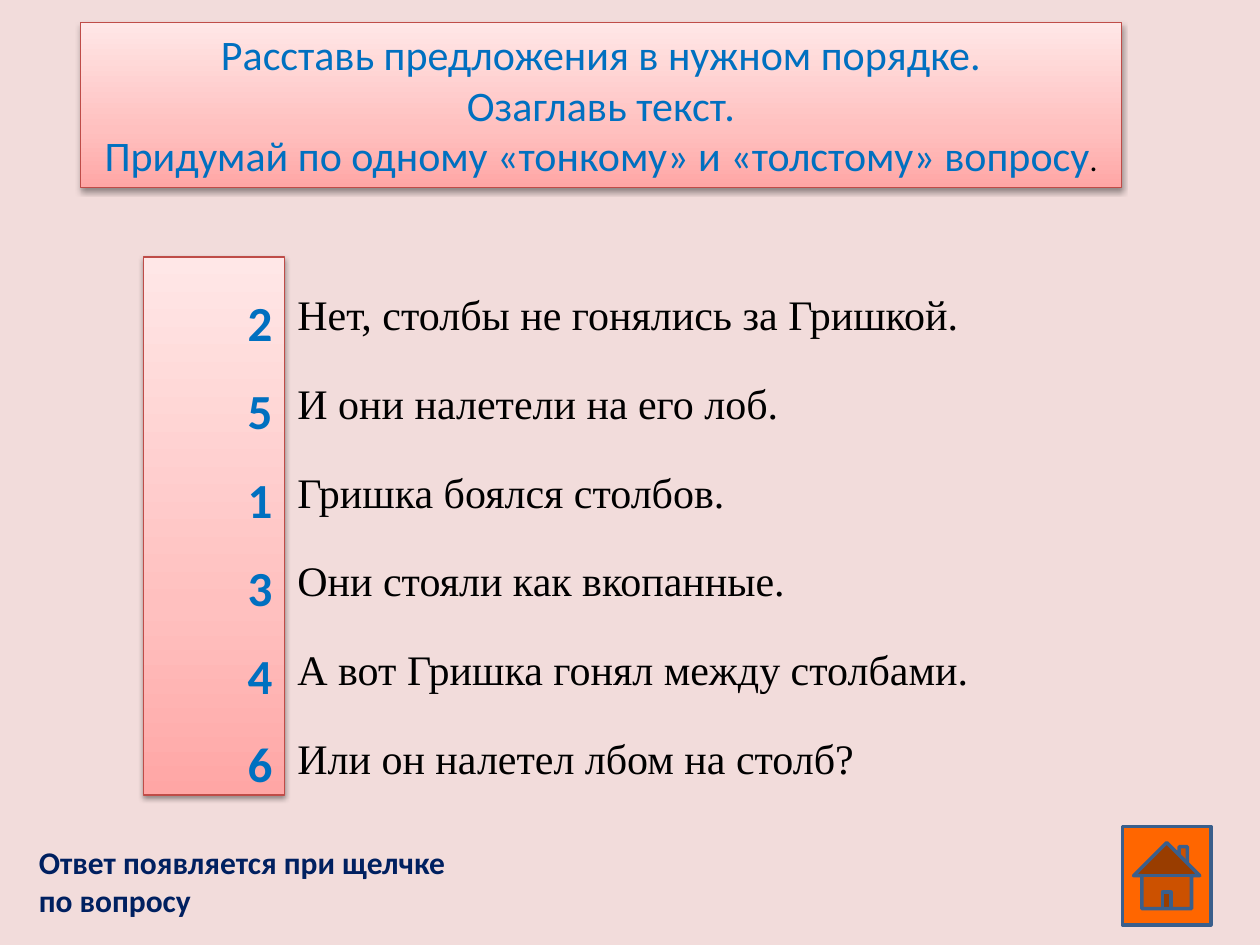
from lxml import etree
from pptx import Presentation
from pptx import util as u
from pptx.dml.color import RGBColor
from pptx.enum import shapes, text
from pptx.oxml.ns import qn

TASK_LINES = [
    "Расставь предложения в нужном порядке.",
    "Озаглавь текст.",
    "Придумай по одному «тонкому» и «толстому» вопросу",
]
SENTENCES = [
    ("2", "Нет, столбы не гонялись за Гришкой."),
    ("5", "И они налетели на его лоб."),
    ("1", "Гришка боялся столбов."),
    ("3", "Они стояли как вкопанные."),
    ("4", "А вот Гришка гонял между столбами."),
    ("6", "Или он налетел лбом на столб?"),
]
PANEL_STOPS = [(0, "FFA6A5"), (35, "FFC0BF"), (100, "FFE7E7")]


def color(hex_value):
    return RGBColor.from_string(hex_value)


def inches(*lengths):
    return [u.Inches(length) for length in lengths]


def place(shape, *box):
    shape.left, shape.top, shape.width, shape.height = inches(*box)


def set_line(shape, hex_value, width):
    shape.line.color.rgb = color(hex_value)
    shape.line.width = u.Pt(width)


def add_color(parent, hex_value):
    return etree.SubElement(parent, qn("a:srgbClr"), val=hex_value)


def style_panel(shape):
    """Give the shape the pink gradient, red outline and soft shadow."""
    properties = shape._element.spPr
    shape.fill.gradient()
    shape.fill.gradient_angle = 90
    stops = properties.find(".//" + qn("a:gsLst"))
    for stop in list(stops):
        stops.remove(stop)
    for position, hex_value in PANEL_STOPS:
        stop = etree.SubElement(stops, qn("a:gs"), pos=str(position * 1000))
        add_color(stop, hex_value)
    set_line(shape, "BF4C48", 0.75)

    shape.shadow.inherit = False
    shadow = etree.SubElement(
        properties.find(qn("a:effectLst")), qn("a:outerShdw"),
        blurRad=str(u.Pt(3.1)), dist=str(u.Pt(1.6)), dir="5400000", rotWithShape="0")
    etree.SubElement(add_color(shadow, "000000"), qn("a:alpha"), val="38000")


def format_font(run, font, size, hex_value, bold=False):
    run.font.name = font
    run.font.size = u.Pt(size)
    run.font.color.rgb = color(hex_value)
    run.font.bold = bold


def write(shape, lines, font, size, hex_value, bold=False,
          align=text.PP_ALIGN.LEFT, spacing=1.0, after=0):
    frame = shape.text_frame
    frame.text = "\n".join(lines)
    frame.word_wrap = True
    frame.auto_size = text.MSO_AUTO_SIZE.NONE
    frame.vertical_anchor = text.MSO_ANCHOR.TOP
    for paragraph in frame.paragraphs:
        paragraph.alignment = align
        paragraph.line_spacing = spacing
        paragraph.space_before = u.Pt(0)
        paragraph.space_after = u.Pt(after)
        for run in paragraph.runs:
            format_font(run, font, size, hex_value, bold)
    frame.paragraphs[-1].space_after = u.Pt(0)


def remove_bullets(shape):
    for paragraph in shape.text_frame.paragraphs:
        properties = paragraph._p.get_or_add_pPr()
        properties.set("marL", "0")
        properties.set("indent", "0")
        etree.SubElement(properties, qn("a:buNone"))


def add_task(slide):
    title = slide.shapes.title
    place(title, 0.64, 0.18, 8.26, 1.31)
    style_panel(title)
    write(title, TASK_LINES, "Calibri", 24, "0070C0", align=text.PP_ALIGN.CENTER)
    full_stop = title.text_frame.paragraphs[-1].add_run()
    full_stop.text = "."
    format_font(full_stop, "Calibri", 18, "000000")


def add_answers(slide, numbers):
    panel = slide.shapes.add_shape(
        shapes.MSO_SHAPE.RECTANGLE, *inches(1.14, 2.04, 1.12, 4.27))
    style_panel(panel)
    write(panel, numbers, "Calibri", 28, "0070C0", bold=True,
          align=text.PP_ALIGN.RIGHT, spacing=1.5)


def add_sentences(slide, sentences):
    body = slide.placeholders[1]
    place(body, 2.26, 2.04, 6.93, 4.23)
    write(body, sentences, "Times New Roman", 24, "000000", spacing=1.5, after=7.5)
    remove_bullets(body)


def add_hint(slide):
    hint = slide.shapes.add_textbox(*inches(0.21, 6.64, 3.53, 0.71))
    write(hint, ["Ответ появляется при щелчке по вопросу"],
          "Calibri", 18, "002060", bold=True)


def add_home_button(slide):
    button = slide.shapes.add_shape(
        shapes.MSO_SHAPE.ACTION_BUTTON_HOME, *inches(8.91, 6.56, 0.7, 0.78))
    button.shadow.inherit = False
    button.fill.solid()
    button.fill.fore_color.rgb = color("FF6600")
    set_line(button, "3A5F8C", 2)


def main():
    presentation = Presentation()
    presentation.slide_width, presentation.slide_height = inches(10, 7.5)
    slide = presentation.slides.add_slide(presentation.slide_layouts[1])
    slide.background.fill.solid()
    slide.background.fill.fore_color.rgb = color("F2DCDB")

    numbers, sentences = zip(*SENTENCES)
    add_task(slide)
    add_answers(slide, numbers)
    add_sentences(slide, sentences)
    add_hint(slide)
    add_home_button(slide)
    presentation.save("out.pptx")


if __name__ == "__main__":
    main()
